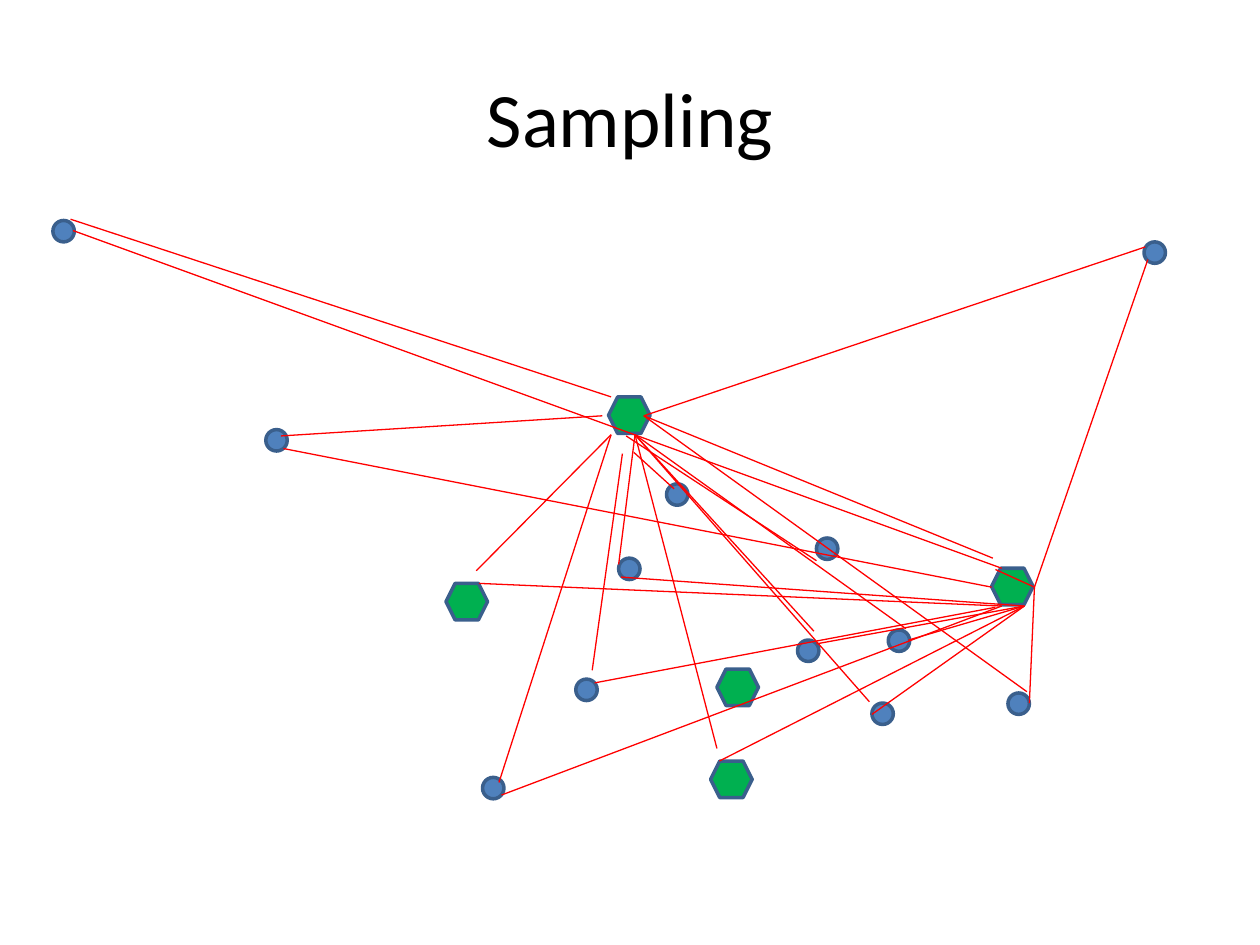
from dataclasses import dataclass
from lxml.etree import SubElement
from pptx import Presentation
from pptx.dml.color import RGBColor
from pptx.enum.shapes import MSO_CONNECTOR, MSO_SHAPE
from pptx.enum.text import MSO_ANCHOR, PP_ALIGN
from pptx.oxml.ns import qn
from pptx.util import Inches, Pt


@dataclass(frozen=True)
class Theme:
    font: str = "Calibri"
    title_size: float = 44
    text: str = "000000"
    background: str = "FFFFFF"
    node: str = "4F81BD"
    sample: str = "00B050"
    outline: str = "3A5F8C"
    link: str = "FF0000"
    outline_width: float = 2
    link_width: float = 0.75


NODE_SIZE = (0.17, 0.17)
SAMPLE_SIZE = (0.33, 0.29)

NODES = [
    (6.92, 5.58), (4.57, 5.39), (6.33, 5.08), (4.91, 4.43),
    (2.11, 3.41), (9.08, 1.92), (8, 5.5), (7.05, 5),
    (0.42, 1.75), (3.83, 6.17), (6.48, 4.27), (5.29, 3.84),
]

SAMPLES = [(3.54, 4.63), (7.87, 4.51), (5.64, 6.04), (5.69, 5.31), (4.83, 3.15)]

UPPER_FANS = {
    (5.11, 3.3): [(9.09, 1.96), (7.88, 4.43), (8.15, 5.49)],
    (4.78, 3.3): [(2.23, 3.46)],
    (4.85, 3.15): [(0.56, 1.74)],
    (4.85, 3.45): [(3.78, 4.53), (3.96, 6.21)],
    (5.04, 3.45): [(4.91, 4.48), (7.19, 4.99), (6.9, 5.57), (6.46, 5.01), (5.69, 5.94)],
    (4.94, 3.6): [(4.7, 5.32)],
    (5.03, 3.59): [(5.35, 3.88)],
    (4.97, 3.46): [(6.48, 4.45)],
}

RIGHT_FANS = {
    (8.21, 4.66): [(9.11, 2.06), (7.9, 4.52), (8.17, 5.58)],
    (7.87, 4.66): [(2.25, 3.56)],
    (7.95, 4.51): [(0.58, 1.83)],
    (7.95, 4.81): [(3.8, 4.63), (3.98, 6.31)],
    (8.13, 4.81): [(4.93, 4.58), (7.21, 5.08), (6.92, 5.67), (6.48, 5.11), (5.71, 6.04)],
    (7.9, 4.82): [(4.72, 5.42)],
}


def write_text(tf, text, *, font, size, color, align=PP_ALIGN.CENTER, anchor=MSO_ANCHOR.MIDDLE):
    tf.word_wrap = True
    tf.vertical_anchor = anchor
    p = tf.paragraphs[0]
    p.alignment = align
    r = p.add_run()
    r.text = text
    r.font.name = font
    r.font.size = Pt(size)
    r.font.color.rgb = RGBColor.from_string(color)


class Builder:
    def __init__(self, prs, theme):
        self.theme = theme
        self.s = prs.slides.add_slide(prs.slide_layouts[5])
        fill = self.s.background.fill
        fill.solid()
        fill.fore_color.rgb = RGBColor.from_string(theme.background)

    def title(self, text, left, top, width, height):
        sp = self.s.shapes.title
        sp.left, sp.top = Inches(left), Inches(top)
        sp.width, sp.height = Inches(width), Inches(height)
        t = self.theme
        write_text(sp.text_frame, text, font=t.font, size=t.title_size, color=t.text)

    def group(self):
        return self.s.shapes.add_group_shape().shapes

    def marks(self, shapes, kind, places, size, color):
        width, height = size
        for left, top in places:
            sp = shapes.add_shape(kind, Inches(left), Inches(top), Inches(width), Inches(height))
            sp.shadow.inherit = False
            sp.fill.solid()
            sp.fill.fore_color.rgb = RGBColor.from_string(color)
            sp.line.color.rgb = RGBColor.from_string(self.theme.outline)
            sp.line.width = Pt(self.theme.outline_width)

    def link(self, shapes, start, end):
        ends = [Inches(v) for v in (*start, *end)]
        cxn = shapes.add_connector(MSO_CONNECTOR.STRAIGHT, *ends)
        cxn.line.color.rgb = RGBColor.from_string(self.theme.link)
        cxn.line.width = Pt(self.theme.link_width)
        SubElement(cxn._element.spPr, qn("a:effectLst"))

    def fans(self, fans):
        shapes = self.group()
        for start, ends in fans.items():
            for end in ends:
                self.link(shapes, start, end)


def main():
    prs = Presentation()
    prs.slide_width, prs.slide_height = Inches(10), Inches(7.5)
    theme = Theme()
    b = Builder(prs, theme)
    b.title("Sampling", 0.5, 0.3, 9, 1.25)
    b.marks(b.s.shapes, MSO_SHAPE.OVAL, NODES, NODE_SIZE, theme.node)
    b.marks(b.group(), MSO_SHAPE.HEXAGON, SAMPLES, SAMPLE_SIZE, theme.sample)
    for fans in (UPPER_FANS, RIGHT_FANS):
        b.fans(fans)
    prs.save("out.pptx")


if __name__ == "__main__":
    main()
